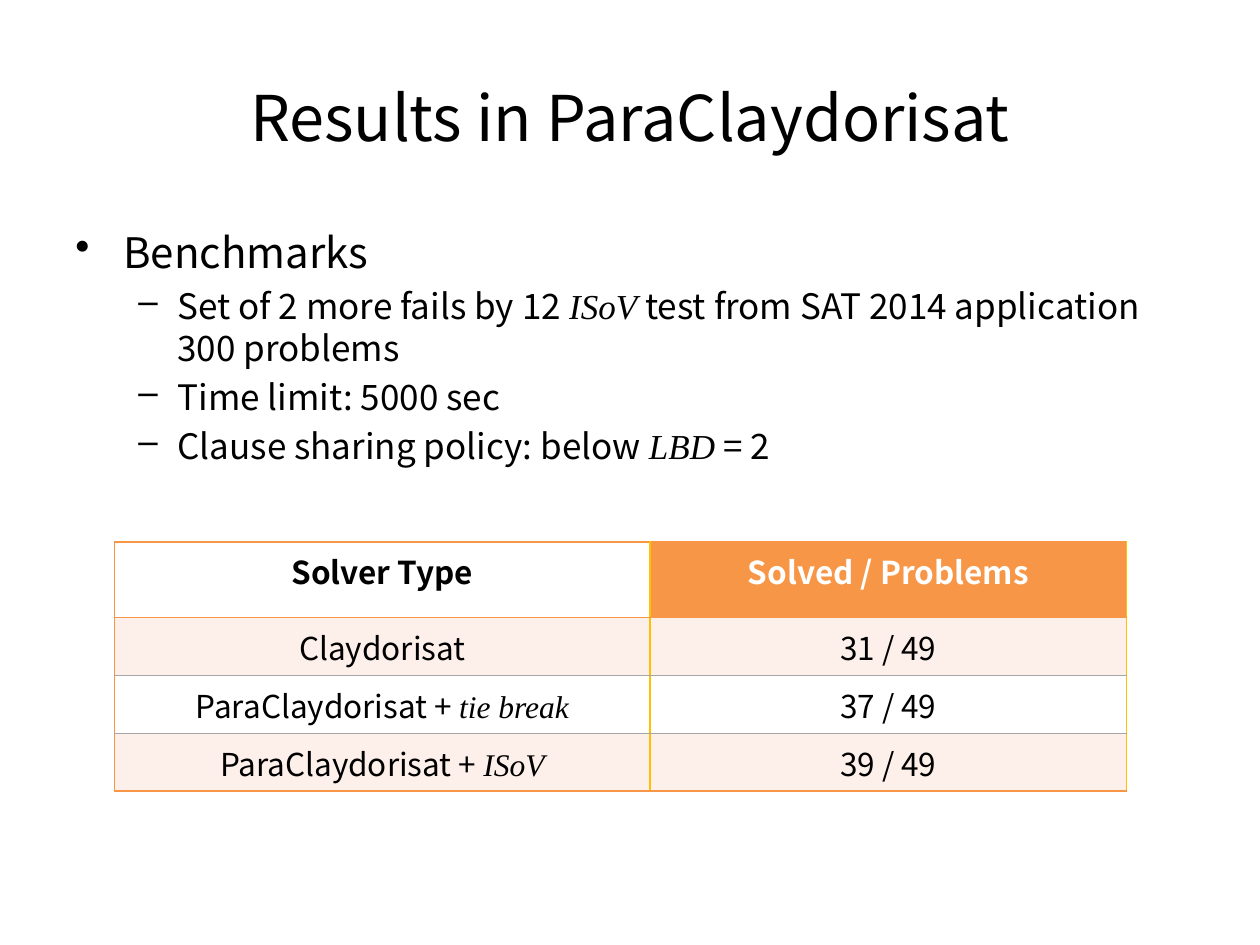
import pptx
import pptx.util
import pptx.dml.color
import pptx.enum.text
import pptx.oxml
import pptx.oxml.ns
from lxml import etree

Inches, Pt = pptx.util.Inches, pptx.util.Pt
RGBColor = pptx.dml.color.RGBColor
CENTER = pptx.enum.text.PP_ALIGN.CENTER
SANS, SERIF = "Noto Sans CJK KR", "Times New Roman"
BLACK = RGBColor(0x00, 0x00, 0x00)
WHITE = RGBColor(0xFF, 0xFF, 0xFF)
ORANGE = RGBColor(0xF7, 0x96, 0x46)
GOLD = RGBColor(0xFF, 0xC0, 0x00)
GRAY = RGBColor(0xA6, 0xA6, 0xA6)
PEACH = RGBColor(0xFD, 0xEF, 0xE9)


def write(paragraph, text, size, color=BLACK):
    """Write text, setting the parts between asterisks in serif italics."""
    paragraph.font.size = Pt(size)
    paragraph.font.color.rgb = color
    paragraph.font.name = SANS
    for position, part in enumerate(text.split("*")):
        if part:
            run = paragraph.add_run()
            run.text = part
            if position % 2:
                run.font.name = SERIF
                run.font.italic = True


def add_border(cell, side, color, width):
    line = etree.SubElement(cell._tc.get_or_add_tcPr(),
                            pptx.oxml.ns.qn(f"a:{side}"), w=str(Pt(width)))
    fill = etree.SubElement(line, pptx.oxml.ns.qn("a:solidFill"))
    etree.SubElement(fill, pptx.oxml.ns.qn("a:srgbClr"), val=str(color))


prs = pptx.Presentation()
prs.slide_width, prs.slide_height = Inches(10), Inches(7.5)
slide = prs.slides.add_slide(prs.slide_layouts[6])

# Title
title = slide.shapes.add_textbox(Inches(0.5), Inches(0.3), Inches(9), Inches(1.25)).text_frame
title.word_wrap = True
title.vertical_anchor = pptx.enum.text.MSO_ANCHOR.MIDDLE
title.paragraphs[0].alignment = CENTER
write(title.paragraphs[0], "Results in ParaClaydorisat", 36)

# Benchmark conditions: level, text
conditions = [
    (0, "Benchmarks"),
    (1, "Set of 2 more fails by 12 *ISoV* test from SAT 2014 application 300 problems"),
    (1, "Time limit: 5000 sec"),
    (1, "Clause sharing policy: below *LBD* = 2"),
]
# Bullet, size, left margin and hanging indent of each level
levels = [("•", 24, 0.38, 0.38), ("–", 20, 0.81, 0.31)]
body = slide.shapes.add_textbox(Inches(0.5), Inches(1.75), Inches(9), Inches(4.95)).text_frame
body.word_wrap = True
for index, (level, text) in enumerate(conditions):
    bullet, size, margin, hanging = levels[level]
    paragraph = body.add_paragraph() if index else body.paragraphs[0]
    paragraph.level = level
    paragraph.space_before = Pt(0.2 * size)
    write(paragraph, text, size)
    properties = paragraph._p.get_or_add_pPr()
    properties.set("marL", str(Inches(margin)))
    properties.set("indent", str(-Inches(hanging)))
    mark = pptx.oxml.parse_xml(
        f'<a:buChar {pptx.oxml.ns.nsdecls("a")} char="{bullet}"/>')
    properties.find(pptx.oxml.ns.qn("a:defRPr")).addprevious(mark)

# Results table
results = [
    ("Solver Type", "Solved / Problems"),
    ("Claydorisat", "31 / 49"),
    ("ParaClaydorisat + *tie break*", "37 / 49"),
    ("ParaClaydorisat + *ISoV*", "39 / 49"),
]
table = slide.shapes.add_table(len(results), 2, Inches(0.91), Inches(4.3),
                               Inches(8.03), Inches(1.98)).table
for column, width in zip(table.columns, (4.25, 3.78)):
    column.width = Inches(width)
for r, solver in enumerate(results):
    table.rows[r].height = Inches(0.46 if r else 0.6)
    for c, text in enumerate(solver):
        cell = table.cell(r, c)
        highlighted = r == 0 and c == 1
        paragraph = cell.text_frame.paragraphs[0]
        paragraph.alignment = CENTER
        paragraph.font.bold = r == 0
        write(paragraph, text, 18, WHITE if highlighted else BLACK)

        # Thin rules between body rows, full ones elsewhere
        top = (GRAY, 0.5) if r > 1 else (ORANGE, 1)
        bottom = (GRAY, 0.5) if r in (1, 2) else (ORANGE, 1)
        add_border(cell, "lnL", GOLD if c else ORANGE, 1)
        add_border(cell, "lnR", GOLD, 1)
        add_border(cell, "lnT", *top)
        add_border(cell, "lnB", *bottom)
        cell.fill.solid()
        cell.fill.fore_color.rgb = ORANGE if highlighted else PEACH if r % 2 else WHITE

prs.save("out.pptx")
